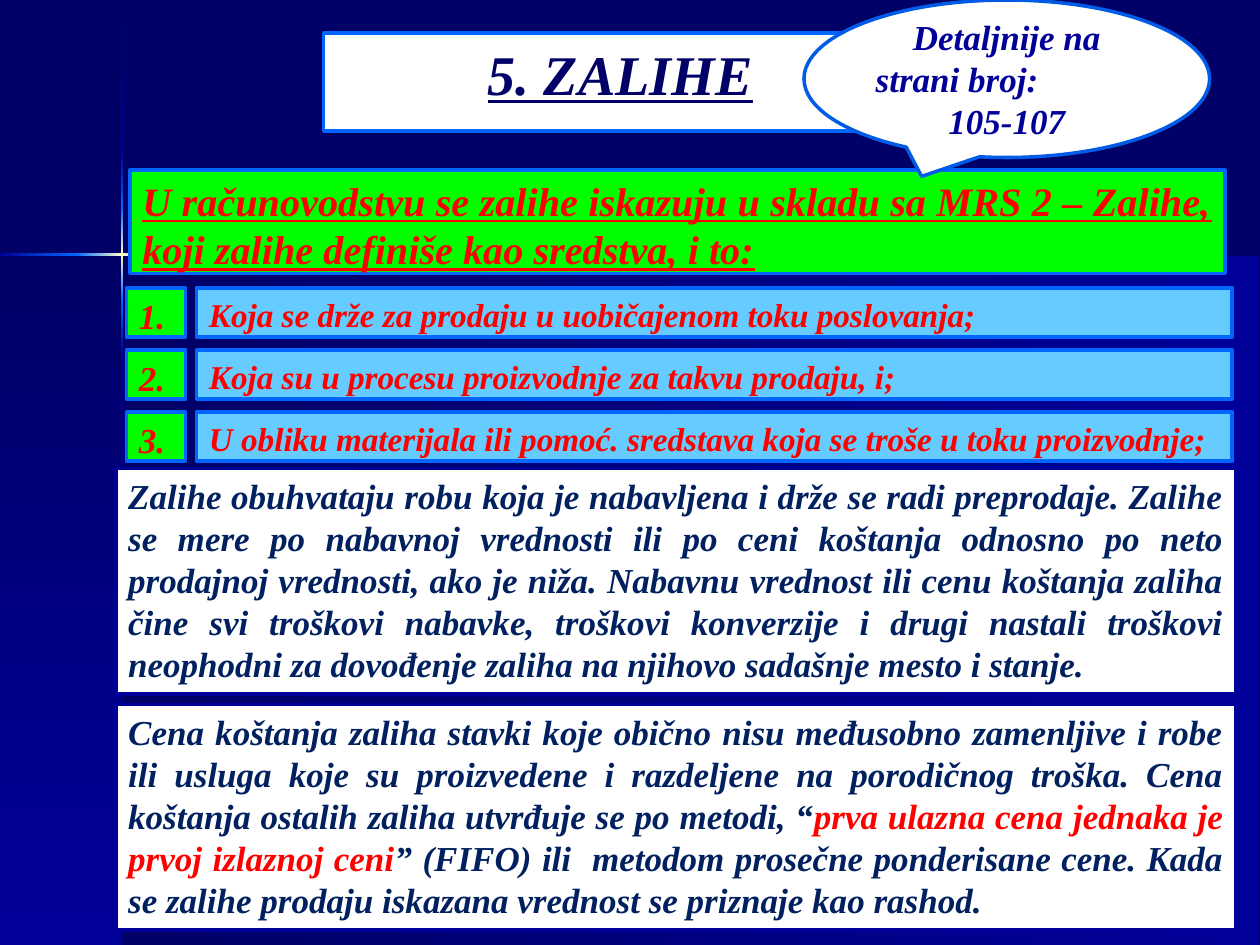
"""Build the slide on inventories (zalihe) with python-pptx."""
from dataclasses import dataclass

from pptx import Presentation
from pptx.dml.color import RGBColor
from pptx.enum.shapes import MSO_SHAPE
from pptx.enum.text import MSO_ANCHOR, MSO_AUTO_SIZE, PP_ALIGN
from pptx.util import Pt

RECT, CALLOUT = MSO_SHAPE.RECTANGLE, MSO_SHAPE.OVAL_CALLOUT
TOP, MIDDLE = MSO_ANCHOR.TOP, MSO_ANCHOR.MIDDLE
LEFT, CENTER, JUSTIFY = PP_ALIGN.LEFT, PP_ALIGN.CENTER, PP_ALIGN.JUSTIFY
RIGHTWARD, DOWNWARD = 0, 270


@dataclass(frozen=True)
class Theme:
    """Colours, font and type sizes of the slide."""
    font: str = "Times New Roman"
    navy: str = "000066"
    blue: str = "000099"
    border: str = "0066FF"
    callout_border: str = "005CE7"
    glow: str = "FFFFCC"
    white: str = "FFFFFF"
    green: str = "00FF00"
    sky: str = "66CCFF"
    red: str = "FF0000"
    ink: str = "002060"
    title_size: int = 32
    lead_size: int = 23
    body_size: int = 20
    item_size: int = 19
    line: int = 2


T = Theme()

TITLE = "5. ZALIHE"
LEAD = ("U računovodstvu se zalihe iskazuju u skladu sa MRS 2 – Zalihe, "
        "koji zalihe definiše kao sredstva, i to:")
ITEMS = [
    "Koja se drže za prodaju u uobičajenom toku poslovanja;",
    "Koja su u procesu proizvodnje za takvu prodaju, i;",
    "U obliku materijala ili pomoć. sredstava koja se troše u toku proizvodnje;",
]
NOTES = [
    [("Zalihe obuhvataju robu koja je nabavljena i drže se radi preprodaje. "
      "Zalihe se mere po nabavnoj vrednosti ili po ceni koštanja odnosno po "
      "neto prodajnoj vrednosti, ako je niža. Nabavnu vrednost ili cenu "
      "koštanja zaliha čine svi troškovi nabavke, troškovi konverzije i drugi "
      "nastali troškovi neophodni za dovođenje zaliha na njihovo sadašnje "
      "mesto i stanje.", T.ink)],
    [("Cena koštanja zaliha stavki koje obično nisu međusobno zamenljive i "
      "robe ili usluga koje su proizvedene i razdeljene na porodičnog troška. "
      "Cena koštanja ostalih zaliha utvrđuje se po metodi, “", T.ink),
     ("prva ulazna cena jednaka je prvoj izlaznoj ceni", T.red),
     ("” (FIFO) ili  metodom prosečne ponderisane cene. Kada se zalihe "
      "prodaju iskazana vrednost se priznaje kao rashod.", T.ink)],
]
REFERENCE = [("Detaljnije na", CENTER), ("strani broj:", LEFT), ("105-107", CENTER)]

PANELS = [
    ((70, 145.4, 649.4, 394.6), RIGHTWARD),
    ((0, 145.4, 70, 394.6), DOWNWARD),
]
VERTICAL_STOPS = [(0.7, T.navy), (87.1, T.blue), (118.8, T.border), (145.1, T.glow),
                  (171.4, T.border), (203, T.blue), (540, T.navy)]
HORIZONTAL_STOPS = [(0, T.blue), (43.5, T.border), (69.6, T.glow), (95.8, T.border)]
TAIL_STOPS = [(127.4, T.blue), (719.3, T.navy)]
BEAM_X, BEAM_Y, BEAM = 69.1, 144.7, 1.4

ROW_TOP, ROW_PITCH, ROW_HEIGHT = 164.5, 35.4, 28.1
NOTE_TOP, NOTE_PITCH = 267.8, 134.7


def rgb(code):
    return RGBColor.from_string(code)


def gradient(s, box, start, end, angle):
    sp = s.shapes.add_shape(RECT, *map(Pt, box))
    sp.shadow.inherit = False
    sp.line.fill.background()
    sp.fill.gradient()
    sp.fill.gradient_angle = angle
    for stop, color in zip(sp.fill.gradient_stops, (start, end)):
        stop.color.rgb = rgb(color)


def beam(s, stops, vertical):
    for (a, start), (b, end) in zip(stops, stops[1:]):
        if vertical:
            gradient(s, (BEAM_X, a, BEAM, b - a), start, end, DOWNWARD)
        else:
            gradient(s, (a, BEAM_Y, b - a, BEAM), start, end, RIGHTWARD)


def style(sp, fill, line):
    sp.fill.solid()
    sp.fill.fore_color.rgb = rgb(fill)
    sp.line.color.rgb = rgb(line)
    sp.line.width = Pt(T.line)


def write(sp, paragraphs, size, anchor=TOP, underline=False):
    tf = sp.text_frame
    tf.word_wrap = True
    tf.auto_size = MSO_AUTO_SIZE.NONE
    tf.vertical_anchor = anchor
    for i, (runs, align) in enumerate(paragraphs):
        p = tf.add_paragraph() if i else tf.paragraphs[0]
        p.alignment = align
        for text, color in runs:
            r = p.add_run()
            r.text = text
            r.font.name = T.font
            r.font.size = Pt(size)
            r.font.bold = r.font.italic = True
            r.font.underline = underline
            r.font.color.rgb = rgb(color)


def panel(s, box, fill, line=T.border, kind=RECT):
    sp = s.shapes.add_shape(kind, *map(Pt, box))
    sp.shadow.inherit = False
    style(sp, fill, line)
    return sp


def main():
    prs = Presentation()
    prs.slide_width, prs.slide_height = Pt(720), Pt(540)
    s = prs.slides.add_slide(prs.slide_layouts[5])
    s.background.fill.solid()
    s.background.fill.fore_color.rgb = rgb(T.navy)

    for box, angle in PANELS:
        gradient(s, box, T.navy, T.blue, angle)
    beam(s, VERTICAL_STOPS, True)
    beam(s, HORIZONTAL_STOPS, False)
    beam(s, TAIL_STOPS, False)

    title = s.shapes.title
    title.left, title.top, title.width, title.height = map(Pt, (185, 18.7, 339, 56.2))
    style(title, T.white, T.border)
    write(title, [([(TITLE, T.navy)], CENTER)], T.title_size, underline=True)

    lead = panel(s, (74.2, 97.2, 625.7, 59), T.green)
    write(lead, [([(LEAD, T.red)], JUSTIFY)], T.lead_size, underline=True)

    for i, runs in enumerate(NOTES):
        note = panel(s, (66.2, NOTE_TOP + i * NOTE_PITCH, 640, 128.9), T.white, T.blue)
        write(note, [(runs, JUSTIFY)], T.body_size)

    for i, text in enumerate(ITEMS):
        top = ROW_TOP + i * ROW_PITCH
        number = panel(s, (72.3, top, 33.8, ROW_HEIGHT), T.green)
        write(number, [([(f"{i + 1}.", T.red)], LEFT)], T.body_size)
        item = panel(s, (112.3, top, 591.8, ROW_HEIGHT), T.sky)
        write(item, [([(text, T.red)], LEFT)], T.item_size)

    callout = panel(s, (459.4, 0, 231.8, 90), T.white, T.callout_border, CALLOUT)
    callout.adjustments[0], callout.adjustments[1] = -0.21, 0.62
    write(callout, [([(text, T.blue)], align) for text, align in REFERENCE],
          T.body_size, MIDDLE)

    prs.save("out.pptx")


if __name__ == "__main__":
    main()
